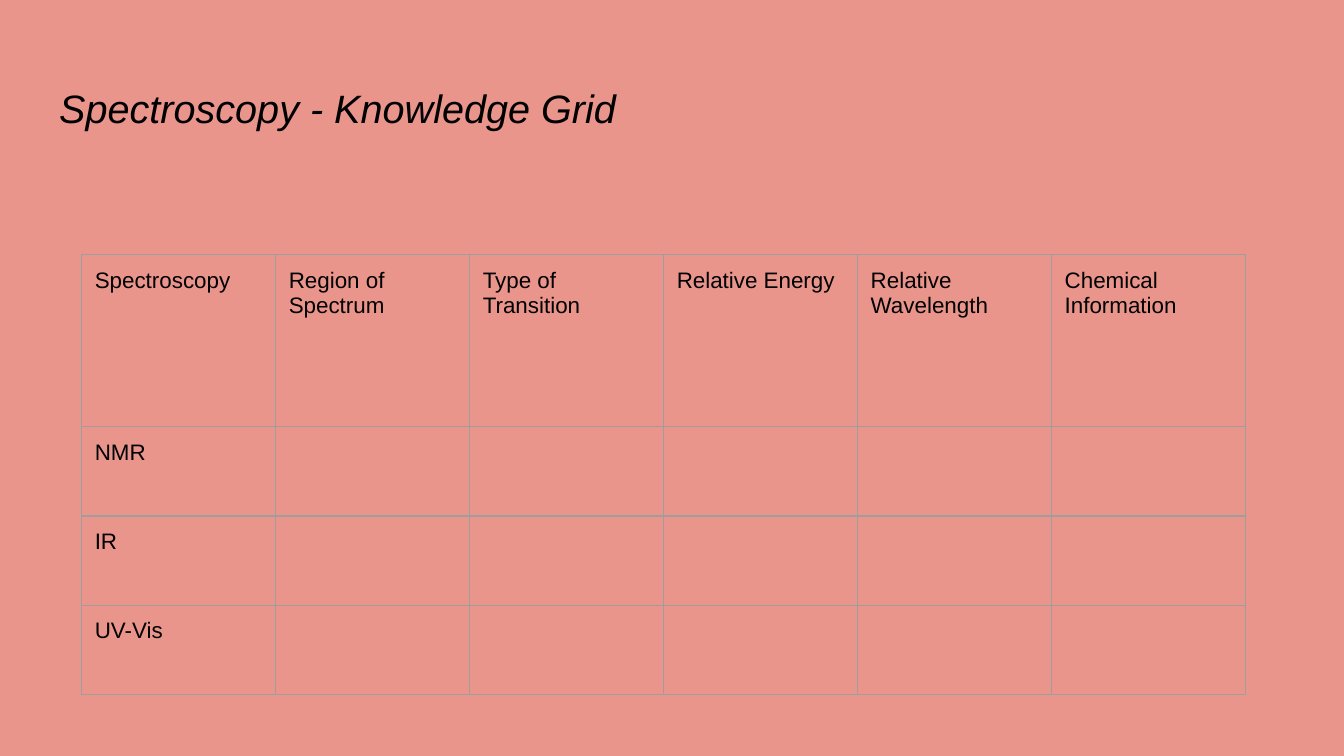
from dataclasses import dataclass

from lxml.etree import SubElement
from pptx import Presentation
from pptx.dml.color import RGBColor
from pptx.enum.text import MSO_ANCHOR, PP_ALIGN
from pptx.oxml.ns import qn
from pptx.util import Pt


@dataclass(frozen=True)
class Theme:
    back: str = "EA958C"
    ink: str = "000000"
    rule: str = "9E9E9E"
    face: str = "Arial"
    head: float = 21.2
    body: float = 12


THEME = Theme()
INSET = Pt(7.2)
MARGINS = {f"margin_{side}": INSET for side in ("left", "right", "top", "bottom")}
TITLE = "Spectroscopy - Knowledge Grid"
HEADS = ["Spectroscopy", "Region of Spectrum", "Type of Transition",
         "Relative Energy", "Relative Wavelength", "Chemical Information"]
METHODS = ["NMR", "IR", "UV-Vis"]


def apply(item, values):
    for name, value in values.items():
        setattr(item, name, value)


def style(frame, size, italic=False):
    for para in frame.paragraphs:
        para.alignment = PP_ALIGN.LEFT
        apply(para.font, {"name": THEME.face, "size": Pt(size),
                          "bold": False, "italic": italic})
        para.font.color.rgb = RGBColor.from_string(THEME.ink)
        for run in para.runs:
            apply(run.font, {"name": THEME.face, "size": Pt(size),
                             "bold": False, "italic": italic})
            run.font.color.rgb = RGBColor.from_string(THEME.ink)


def border(cell):
    """Rule all four sides; the lines must come before the cell's fill."""
    props = cell._tc.get_or_add_tcPr()
    for side in ("lnL", "lnR", "lnT", "lnB"):
        line = SubElement(props, qn(f"a:{side}"), w=str(Pt(0.75)))
        fill = SubElement(line, qn("a:solidFill"))
        SubElement(fill, qn("a:srgbClr"), val=THEME.rule)


def add_title(slide):
    title = slide.shapes.title
    apply(title, {"left": Pt(24.5), "top": Pt(35), "width": Pt(671), "height": Pt(45)})
    frame = title.text_frame
    frame.text = TITLE
    apply(frame, {**MARGINS, "word_wrap": True, "vertical_anchor": MSO_ANCHOR.MIDDLE})
    style(frame, THEME.head, italic=True)


def add_grid(slide):
    wide, tall, low = 103.93, 92.15, 47.8
    rows = [HEADS] + [[name] + [""] * (len(HEADS) - 1) for name in METHODS]
    heights = [tall] + [low] * len(METHODS)
    table = slide.shapes.add_table(
        len(rows), len(HEADS), Pt(43.6), Pt(136.5),
        Pt(wide * len(HEADS)), Pt(sum(heights))).table
    apply(table, {"first_row": False, "horz_banding": False})
    for col in table.columns:
        col.width = Pt(wide)
    for row, height, texts in zip(table.rows, heights, rows):
        row.height = Pt(height)
        for cell, text in zip(row.cells, texts):
            cell.text = text
            apply(cell, {**MARGINS, "vertical_anchor": MSO_ANCHOR.TOP})
            style(cell.text_frame, THEME.body)
            border(cell)
            cell.fill.background()


def main():
    deck = Presentation()
    apply(deck, {"slide_width": Pt(720), "slide_height": Pt(405)})
    slide = deck.slides.add_slide(deck.slide_layouts[5])
    fill = slide.background.fill
    fill.solid()
    fill.fore_color.rgb = RGBColor.from_string(THEME.back)
    add_title(slide)
    add_grid(slide)
    deck.save("out.pptx")


if __name__ == "__main__":
    main()
